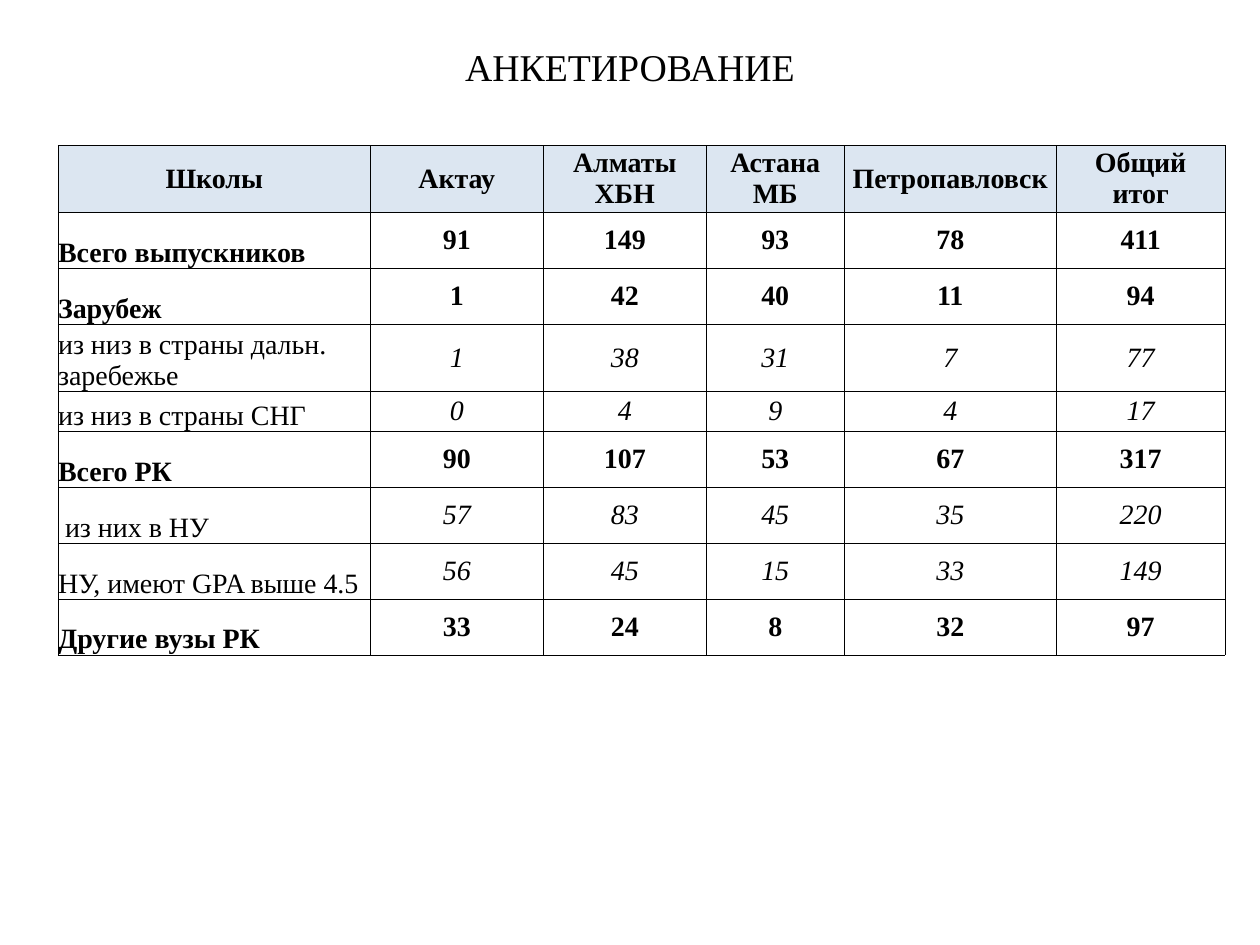
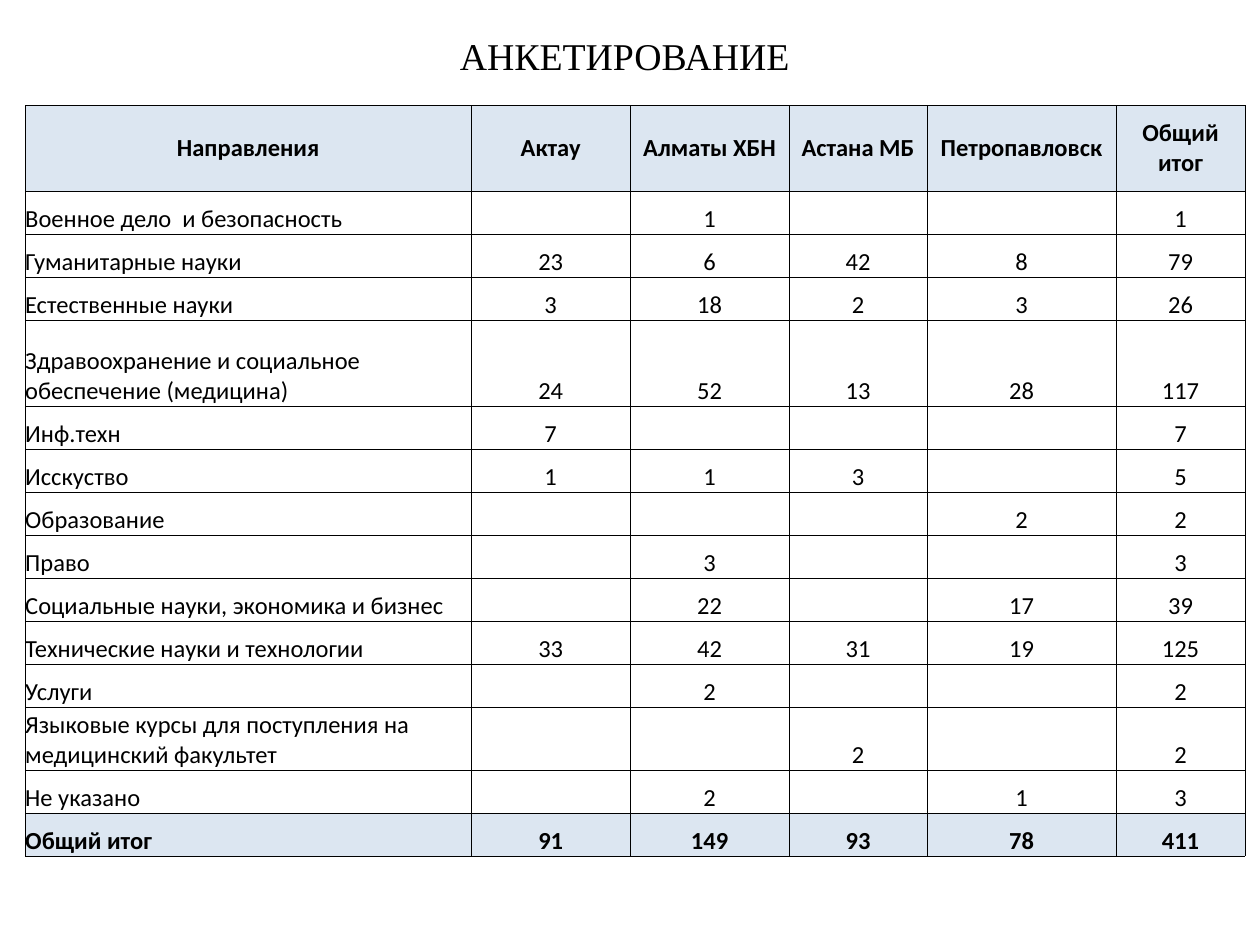
"""Builds two survey slides, each a title above a bordered table."""
from lxml.etree import SubElement
from pptx import Presentation
from pptx.dml.color import RGBColor
from pptx.enum.text import MSO_ANCHOR as Anchor, PP_ALIGN as Align
from pptx.oxml.ns import qn
from pptx.util import Pt

BLACK = RGBColor(0x00, 0x00, 0x00)
PALE_BLUE = RGBColor(0xDC, 0xE6, 0xF1)
SERIF, SANS = "Times New Roman", "Calibri"
HEADING = "АНКЕТИРОВАНИЕ"

CITIES = ["Актау", "Алматы ХБН", "Астана МБ", "Петропавловск", "Общий\nитог"]

GRADUATES = [
    ("Школы", CITIES, "header", 32),
    ("Всего выпускников", [91, 149, 93, 78, 411], "total", 32),
    ("Зарубеж", [1, 42, 40, 11, 94], "total", 32),
    ("из низ в страны дальн. заребежье", [1, 38, 31, 7, 77], "detail", 29),
    ("из низ в страны СНГ", [0, 4, 9, 4, 17], "detail", 22.7),
    ("Всего РК", [90, 107, 53, 67, 317], "total", 32),
    (" из них в НУ", [57, 83, 45, 35, 220], "detail", 32),
    ("НУ, имеют GPA выше 4.5", [56, 45, 15, 33, 149], "detail", 32),
    ("Другие вузы РК", [33, 24, 8, 32, 97], "total", 32),
]

ROW = 24.55
FIELDS = [
    ("Направления", CITIES, "header", 2 * ROW),
    ("Военное дело  и безопасность", ["", 1, "", "", 1], "plain", ROW),
    ("Гуманитарные науки", [23, 6, 42, 8, 79], "plain", ROW),
    ("Естественные науки", [3, 18, 2, 3, 26], "plain", ROW),
    ("Здравоохранение и социальное обеспечение (медицина)",
     [24, 52, 13, 28, 117], "plain", 2 * ROW),
    ("Инф.техн", [7, "", "", "", 7], "plain", ROW),
    ("Исскуство", [1, 1, 3, "", 5], "plain", ROW),
    ("Образование", ["", "", "", 2, 2], "plain", ROW),
    ("Право", ["", 3, "", "", 3], "plain", ROW),
    ("Социальные науки, экономика и бизнес", ["", 22, "", 17, 39], "plain", ROW),
    ("Технические науки и технологии", [33, 42, 31, 19, 125], "plain", ROW),
    ("Услуги", ["", 2, "", "", 2], "plain", ROW),
    ("Языковые курсы для поступления на медицинский факультет",
     ["", "", 2, "", 2], "plain", 36),
    ("Не указано", ["", 2, "", 1, 3], "plain", ROW),
    ("Общий итог", [91, 149, 93, 78, 411], "grand", ROW),
]

SURVEYS = [
    dict(heading_at=(36, 21.6), table_at=(33.2, 83), rows=GRADUATES,
         widths=[178.5, 98.8, 93.1, 78.9, 121.1, 96.5],
         font=SERIF, size=16, number_anchor=Anchor.MIDDLE),
    dict(heading_at=(33, 15.1), table_at=(14.4, 60.3), rows=FIELDS,
         widths=[254.9, 90.8, 90.8, 78.9, 108, 73.7],
         font=SANS, size=14, number_anchor=Anchor.BOTTOM),
]


def write(frame, text, font, size, bold=False, italic=False, align=Align.CENTER):
    """Fill a text frame, one paragraph per line of text."""
    frame.word_wrap = True
    frame.text = str(text)
    for paragraph in frame.paragraphs:
        paragraph.alignment = align
        for run in paragraph.runs:
            run.font.name, run.font.size = font, Pt(size)
            run.font.bold, run.font.italic = bold, italic
            run.font.color.rgb = BLACK


def dress(cell, shaded):
    """Give a cell thin borders, no insets and its background."""
    cell.margin_left = cell.margin_right = cell.margin_top = cell.margin_bottom = 0
    properties = cell._tc.get_or_add_tcPr()
    for side in ("a:lnL", "a:lnR", "a:lnT", "a:lnB"):
        border = SubElement(properties, qn(side), w=str(Pt(0.25)))
        solid = SubElement(border, qn("a:solidFill"))
        SubElement(solid, qn("a:srgbClr"), val=str(BLACK))
    if shaded:
        cell.fill.solid()
        cell.fill.fore_color.rgb = PALE_BLUE
    else:
        cell.fill.background()


def add_heading(slide, left, top):
    box = slide.shapes.add_textbox(Pt(left), Pt(top), Pt(648), Pt(33))
    box.text_frame.vertical_anchor = Anchor.MIDDLE
    write(box.text_frame, HEADING, SERIF, 21.6)


def add_survey(slide, table_at, rows, widths, font, size, number_anchor):
    left, top = table_at
    table = slide.shapes.add_table(
        len(rows), len(widths), Pt(left), Pt(top),
        Pt(sum(widths)), Pt(sum(height for *_, height in rows))).table
    table.first_row = table.horz_banding = False
    for column, width in zip(table.columns, widths):
        column.width = Pt(width)
    for row, (label, values, kind, height) in zip(table.rows, rows):
        row.height = Pt(height)
        for index, (cell, entry) in enumerate(zip(row.cells, [label, *values])):
            is_label = index == 0 and kind != "header"
            dress(cell, shaded=kind in ("header", "grand"))
            if kind == "header":
                cell.vertical_anchor = Anchor.MIDDLE
            else:
                cell.vertical_anchor = Anchor.BOTTOM if is_label else number_anchor
            write(cell.text_frame, entry, font, size,
                  bold=kind in ("header", "total", "grand"),
                  italic=kind == "detail" and not is_label,
                  align=Align.LEFT if is_label else Align.CENTER)


def main():
    deck = Presentation()
    deck.slide_width, deck.slide_height = Pt(720), Pt(540)
    for survey in SURVEYS:
        slide = deck.slides.add_slide(deck.slide_layouts[6])
        add_heading(slide, *survey["heading_at"])
        add_survey(slide, **{key: value for key, value in survey.items()
                             if key != "heading_at"})
    deck.save("out.pptx")


if __name__ == "__main__":
    main()
